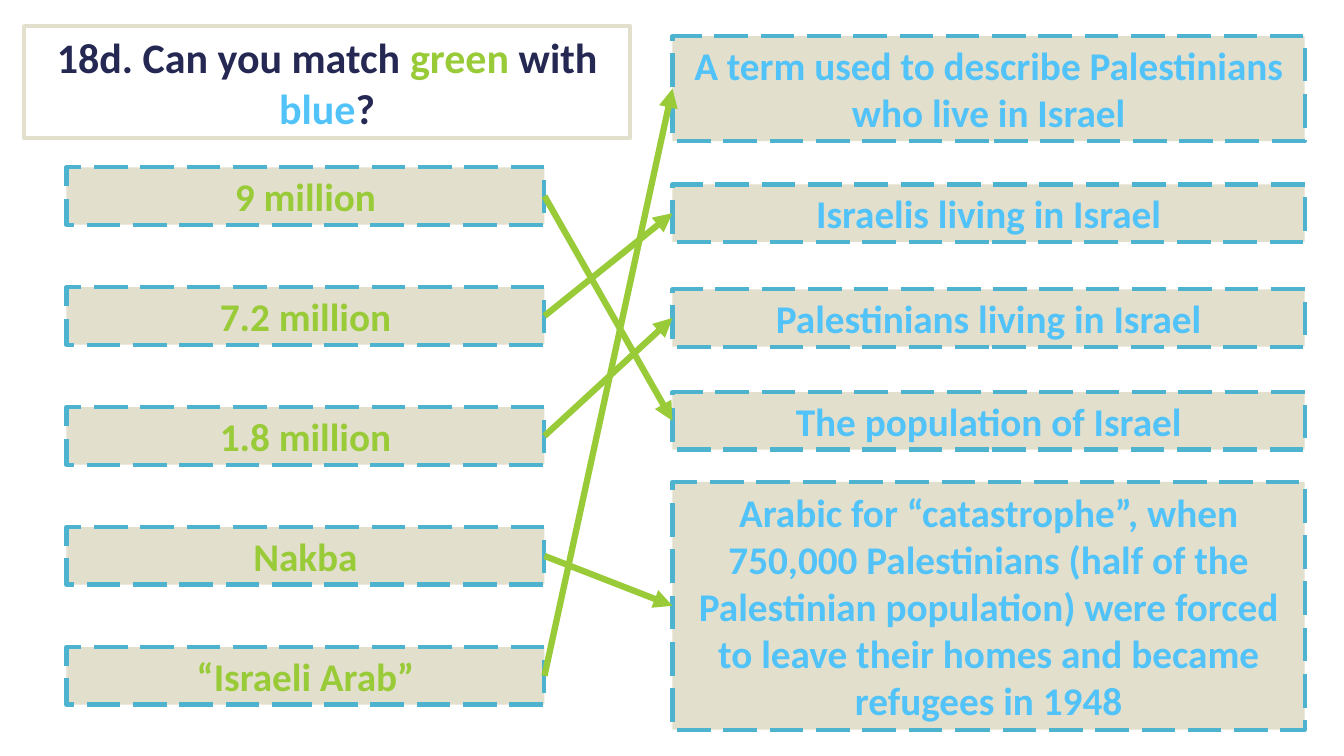
"""Build a matching-exercise slide: green terms joined to blue descriptions."""
from lxml.etree import SubElement
from pptx import Presentation
from pptx.dml.color import RGBColor
from pptx.enum.dml import MSO_LINE
from pptx.enum.shapes import MSO_CONNECTOR, MSO_SHAPE
from pptx.enum.text import MSO_ANCHOR, MSO_AUTO_SIZE, PP_ALIGN
from pptx.oxml.ns import qn
from pptx.util import Inches, Pt

THEME = {
    "green": RGBColor.from_string("99CB38"),
    "blue": RGBColor.from_string("51C3F9"),
    "navy": RGBColor.from_string("242852"),
    "sand": RGBColor.from_string("E2DFCC"),
    "border": RGBColor.from_string("4EB3CF"),
    "white": RGBColor.from_string("FFFFFF"),
    "font": "Calibri",
    "question_size": Pt(30),
    "answer_size": Pt(28),
    "border_width": Pt(3),
    "arrow_width": Pt(4.5),
}
FRAME_FORMAT = {
    "word_wrap": True,
    "auto_size": MSO_AUTO_SIZE.SHAPE_TO_FIT_TEXT,
    "vertical_anchor": MSO_ANCHOR.MIDDLE,
}
FONT_FORMAT = {"name": THEME["font"], "bold": True}
CARD_LINE = {"width": THEME["border_width"], "dash_style": MSO_LINE.LONG_DASH}
QUESTION_LINE = {"width": THEME["border_width"]}


def apply_format(target, values):
    for attribute, value in values.items():
        setattr(target, attribute, value)


def add_box(place, runs, size, fill, border, line_format):
    box = slide.shapes.add_shape(MSO_SHAPE.RECTANGLE, *map(Inches, place))
    box.shadow.inherit = False
    box.fill.solid()
    box.fill.fore_color.rgb = THEME[fill]
    box.line.color.rgb = THEME[border]
    apply_format(box.line, line_format)
    apply_format(box.text_frame, FRAME_FORMAT)
    paragraph = box.text_frame.paragraphs[0]
    paragraph.alignment = PP_ALIGN.CENTER
    for text, color in runs:
        run = paragraph.add_run()
        run.text = text
        apply_format(run.font, FONT_FORMAT | {"size": THEME[size]})
        run.font.color.rgb = THEME[color]
    return box


presentation = Presentation()
presentation.slide_width = Inches(13.33)
presentation.slide_height = Inches(7.5)
slide = presentation.slides.add_slide(presentation.slide_layouts[6])

question = [
    ("18d. Can you match ", "navy"),
    ("green", "green"),
    (" with ", "navy"),
    ("blue", "blue"),
    ("?", "navy"),
]
add_box((0.24, 0.26, 6.01, 1.11), question, "question_size", "white", "sand", QUESTION_LINE)

descriptions = [
    ("A term used to describe Palestinians who live in Israel", 0.36, 1.04),
    ("Israelis living in Israel", 1.83, 0.57),
    ("Palestinians living in Israel", 2.87, 0.57),
    ("The population of Israel", 3.89, 0.57),
    ("Arabic for “catastrophe”, when 750,000 Palestinians (half of the Palestinian "
     "population) were forced to leave their homes and became refugees in 1948", 4.78, 2.46),
]
description_boxes = [
    add_box((6.67, top, 6.27, height), [(text, "blue")], "answer_size", "sand", "border", CARD_LINE)
    for text, top, height in descriptions
]

term_matches = [
    ("9 million", 3),
    ("7.2 million", 1),
    ("1.8 million", 2),
    ("Nakba", 4),
    ("“Israeli Arab”", 0),
]
first_term_top, term_pitch = 1.66, 1.19
for row, (term, match) in enumerate(term_matches):
    place = (0.66, first_term_top + row * term_pitch, 4.74, 0.57)
    term_box = add_box(place, [(term, "green")], "answer_size", "sand", "border", CARD_LINE)
    arrow = slide.shapes.add_connector(MSO_CONNECTOR.STRAIGHT, 0, 0, 0, 0)
    arrow.begin_connect(term_box, 3)
    arrow.end_connect(description_boxes[match], 1)
    arrow.line.color.rgb = THEME["green"]
    arrow.line.width = THEME["arrow_width"]
    properties = arrow.element.spPr
    SubElement(properties.find(qn("a:ln")), qn("a:tailEnd"), type="triangle")
    SubElement(properties, qn("a:effectLst"))

presentation.save("out.pptx")
